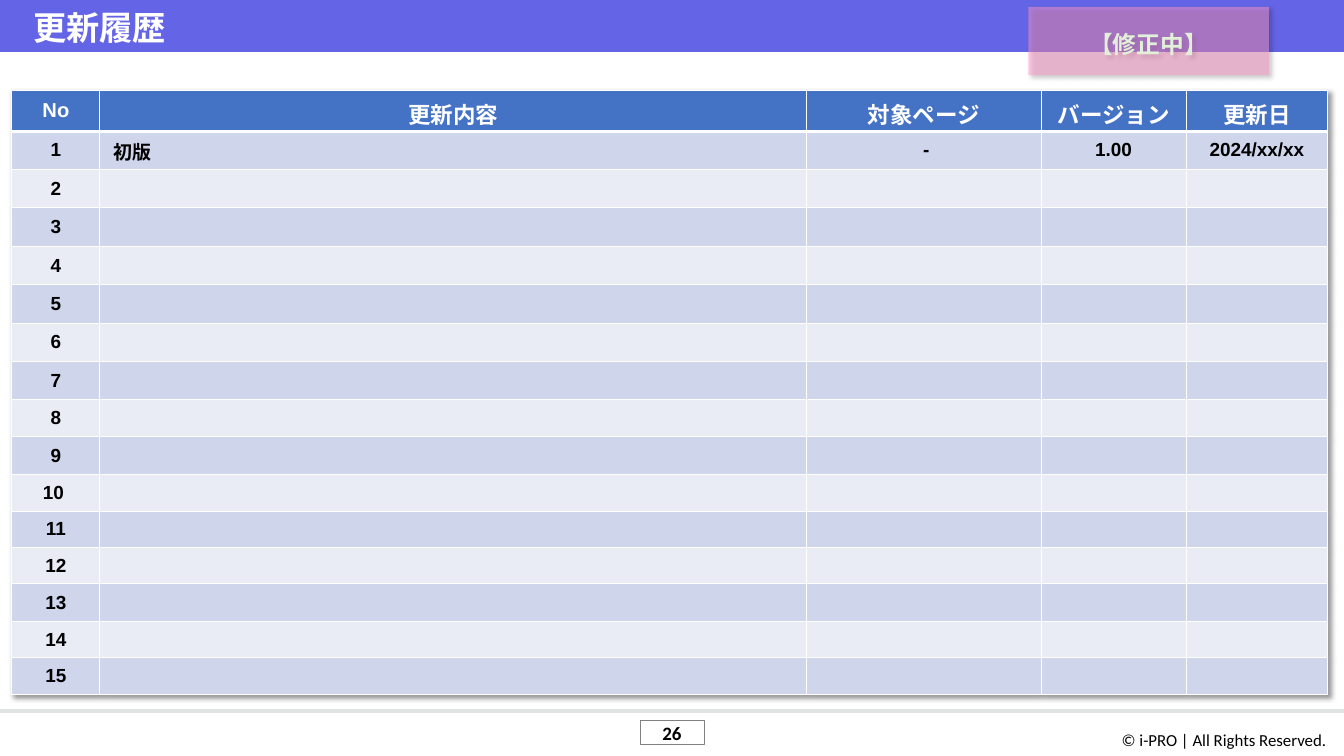
from lxml import etree
from pptx import Presentation
from pptx.dml.color import RGBColor as RGB
from pptx.enum.lang import MSO_LANGUAGE_ID as Lang
from pptx.enum.shapes import MSO_CONNECTOR as Link, MSO_SHAPE as Form
from pptx.enum.text import MSO_ANCHOR as Anchor, PP_ALIGN as Align
from pptx.oxml import parse_xml
from pptx.oxml.ns import nsdecls, qn
from pptx.util import Inches, Pt

HEAD = ["No", "更新内容", "対象ページ", "バージョン", "更新日"]
FIRST = ["1", "初版", " -", "1.00", "2024/xx/xx"]
WIDTHS = [1.03, 8.28, 2.75, 1.7, 1.66]
HEIGHTS = [0.47] + [0.45] * 7 + [0.42, 0.45] + [0.42] * 3 + [0.44, 0.42, 0.42]
BANDS = ["E9EBF5", "CFD5EA"]


def color(code):
    return RGB.from_string(code)


def paint(fill, code):
    fill.solid()
    fill.fore_color.rgb = color(code)


def write(frame, text, size, code, align=Align.CENTER, **style):
    """Put one line of text in a frame."""
    frame.vertical_anchor = Anchor.MIDDLE
    para = frame.paragraphs[0]
    para.alignment = align
    run = para.add_run()
    run.text = text
    form = {"size": Pt(size), "name": "Arial", "bold": True,
            "language_id": Lang.JAPANESE, **style}
    for key, value in form.items():
        setattr(run.font, key, value)
    run.font.color.rgb = color(code)
    return para


def add_box(slide, place, fill=None, line=None):
    box = slide.shapes.add_shape(Form.RECTANGLE, *map(Inches, place))
    box.shadow.inherit = False
    if fill:
        paint(box.fill, fill)
    else:
        box.fill.background()
    if line:
        paint(box.line.fill, line)
        box.line.width = Pt(0.75)
    else:
        box.line.fill.background()
    return box


def add_label(slide, place, wrap):
    frame = slide.shapes.add_textbox(*map(Inches, place)).text_frame
    frame.word_wrap = wrap
    return frame


def add_rule(slide, top, width, code):
    rule = slide.shapes.add_connector(
        Link.STRAIGHT, 0, Inches(top), Inches(width), Inches(top))
    rule.line.width = Pt(3)
    rule.line.color.rgb = color(code)
    etree.SubElement(rule._element.spPr, qn("a:effectLst"))


def make_shade():
    """Soft shadow to the lower right."""
    return parse_xml(
        f'<a:effectLst {nsdecls("a")}><a:outerShdw blurRad="{Pt(4)}" '
        f'dist="{Pt(3)}" dir="2700000" algn="tl" rotWithShape="0">'
        '<a:srgbClr val="000000"><a:alpha val="40000"/></a:srgbClr>'
        '</a:outerShdw></a:effectLst>')


def add_edges(cell, base):
    props = cell._tc.get_or_add_tcPr()
    for side, width in zip("LRTB", (1, 1, 1, base)):
        props.append(parse_xml(
            f'<a:ln{side} {nsdecls("a")} w="{Pt(width)}"><a:solidFill>'
            f'<a:srgbClr val="FFFFFF"/></a:solidFill></a:ln{side}>'))


def fill_cell(cell, text, row, col):
    head = row == 0
    add_edges(cell, 3 if head else 1)
    paint(cell.fill, "4472C4" if head else BANDS[row % 2])
    if not text:
        return
    cell.margin_left = cell.margin_right = Inches(0.16)
    cell.margin_top = cell.margin_bottom = Inches(0.08)
    cell.vertical_anchor = Anchor.MIDDLE
    size = (17 if col == 0 else 19) if head else 16
    align = Align.LEFT if row and col == 1 else Align.CENTER
    write(cell.text_frame, text, size, "FFFFFF" if head else "000000", align)


def add_log(slide):
    """Table of revisions, with numbered empty rows."""
    rows = [HEAD, FIRST]
    for num in range(2, len(HEIGHTS)):
        rows.append(["10 " if num == 10 else str(num)] + [""] * 4)
    place = (0.14, 1.06, sum(WIDTHS), sum(HEIGHTS))
    table = slide.shapes.add_table(
        len(rows), len(HEAD), *map(Inches, place)).table
    table._tbl.tblPr.insert(0, make_shade())
    for col, width in zip(table.columns, WIDTHS):
        col.width = Inches(width)
    for row, height in zip(table.rows, HEIGHTS):
        row.height = Inches(height)
    for row, texts in enumerate(rows):
        for col, text in enumerate(texts):
            fill_cell(table.cell(row, col), text, row, col)


def add_title(slide, text):
    frame = add_label(slide, (0, 0, 15.75, 0.61), True)
    frame.margin_top, frame.margin_bottom = Inches(0.08), Inches(0.04)
    para = write(frame, text, 28, "FFFFFF", Align.LEFT)
    props = para._p.get_or_add_pPr()
    props.set("marL", str(Inches(0.29)))
    props.set("indent", "0")


def add_stamp(slide, text):
    """Half transparent status stamp."""
    stamp = add_box(slide, (12.05, 0.08, 2.82, 0.8), "FF99CC")
    props = stamp._element.spPr
    tint = props.find(qn("a:solidFill"))[0]
    etree.SubElement(tint, qn("a:alpha"), val="50000")
    props.replace(props.find(qn("a:effectLst")), make_shade())
    write(stamp.text_frame, text, 20, "E2F0D9").line_spacing = 1.2


def main():
    deck = Presentation()
    deck.slide_width, deck.slide_height = Inches(15.75), Inches(8.86)
    slide = deck.slides.add_slide(deck.slide_layouts[6])

    # Header band and footer
    add_box(slide, (-0.01, -0.02, 15.77, 0.63), "6464E6")
    credit = add_label(slide, (13.01, 8.5, 2.63, 0.34), False)
    write(credit, "© i-PRO | All Rights Reserved.", 14.2, "000000",
          Align.RIGHT, name="Calibri", bold=False)
    add_rule(slide, 8.33, 15.75, "E2E3E3")
    page = add_box(slide, (7.5, 8.44, 0.75, 0.29), line="808080")
    write(page.text_frame, "26", 16, "000000", name="Calibri")

    # Body
    add_log(slide)
    add_title(slide, "更新履歴")
    add_stamp(slide, "【修正中】")
    deck.save("out.pptx")


if __name__ == "__main__":
    main()
